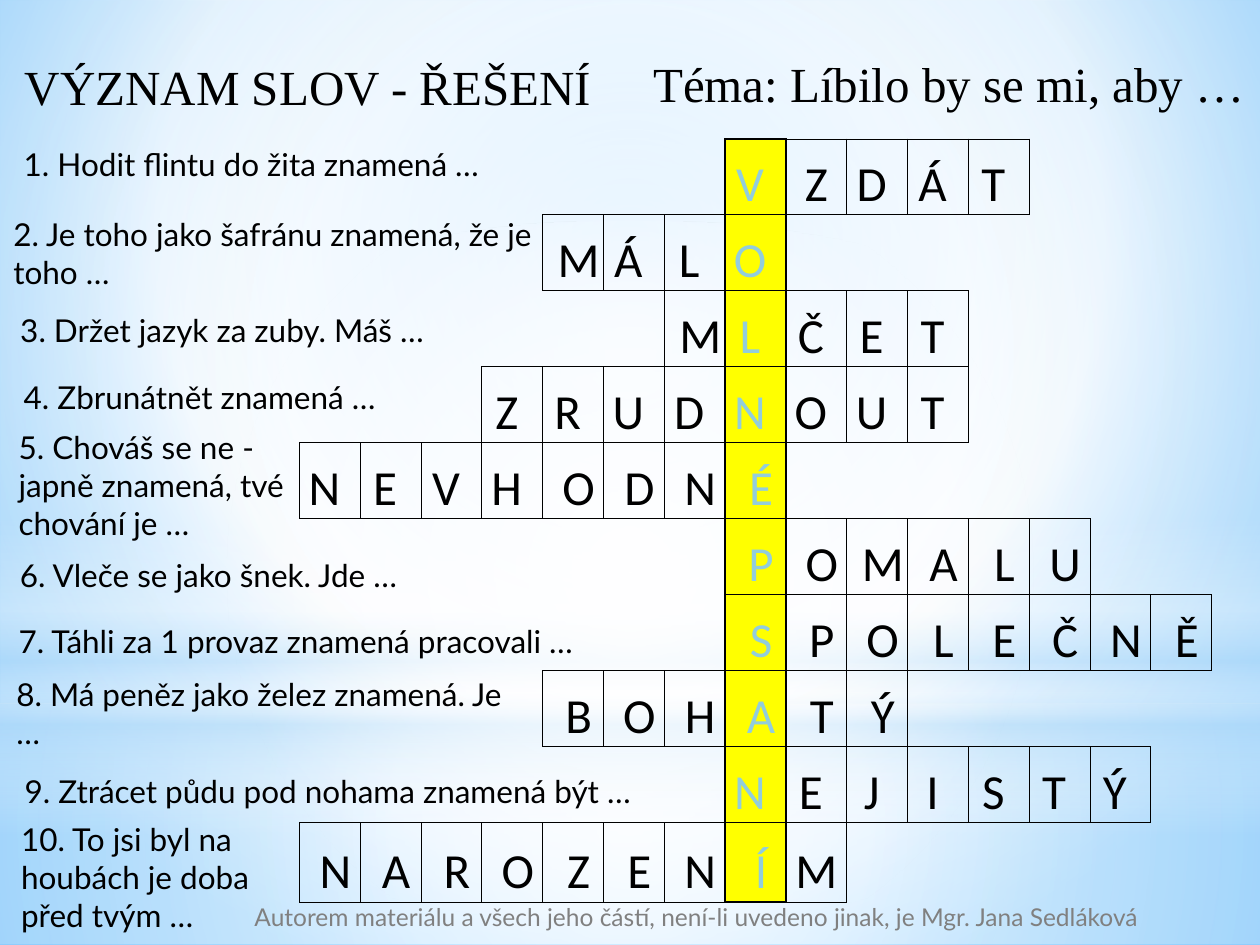
from lxml import etree
from pptx import Presentation
from pptx.dml.color import RGBColor
from pptx.enum.shapes import MSO_SHAPE as SHAPE
from pptx.enum.text import MSO_ANCHOR as ANCHOR, MSO_AUTO_SIZE as AUTO, PP_ALIGN as ALIGN
from pptx.oxml.ns import qn
from pptx.util import Pt

NBSP = chr(160)
BLACK, KEY_TEXT, KEY_FILL, GREY = "000000", "92CDDC", "FFFF00", "808080"
PLAIN_STYLE = "{2D5ABB26-0587-4C30-8999-92F81FD0307C}"
KEY_COL, COLS = 7, 15

# First column and letters of each answer; "_" is a no-break space
ANSWERS = [
    (7, "V_ Z D_ Á_ T_"),
    (4, "_M Á_ L_ O_"),
    (6, "_M L_ Č_ E_ T_"),
    (3, "Z_ R_ U_ D_ N_ O_ U_ T_"),
    (0, "N_ E_ V_ H_ _O _D _N _É"),
    (7, "_P _O _M _A _L _U"),
    (7, "_S _P _O _L _E _Č _N _Ě"),
    (4, "_B _O _H _A _T _Ý"),
    (7, "N_ E_ J_ I_ S_ T_ Ý_"),
    (0, "_N _A _R _O _Z _E _N _Í M"),
]

# Clue text and box: left, top, width, height
CLUES = [
    ("1. Hodit flintu do žita znamená …", (6.5, 79.2, 391, 29)),
    ("2. Je toho jako šafránu znamená, že je toho …", (0.5, 119.5, 312, 51)),
    ("3. Držet jazyk za zuby. Máš …", (4.5, 174.2, 369, 29)),
    ("4. Zbrunátnět znamená …", (6.5, 212.2, 266, 29)),
    ("5. Chováš se ne - japně znamená, tvé chování je …", (3.6, 241.2, 170.6, 72)),
    ("6. Vleče se jako šnek. Jde …", (4.3, 314, 278, 29)),
    ("7. Táhli za 1 provaz znamená pracovali …", (3.6, 352, 408, 29)),
    ("8. Má peněz jako želez znamená. Je …", (2.2, 382.3, 294.5, 51)),
    ("9. Ztrácet půdu pod nohama znamená být …", (7, 437.8, 397, 29)),
    ("10. To jsi byl na houbách je doba před tvým …", (5, 465.1, 158.4, 72.7)),
]


def rgb(value):
    return RGBColor.from_string(value)


def add_run(p, text, size, font, color):
    r = p.add_run()
    r.text = text
    r.font.size = Pt(size)
    r.font.name = font
    r.font.color.rgb = rgb(color)


def set_gradient(parent, stops, focus=None, angle=0):
    """Swap the empty fill of parent for (position, colour, opacity) stops."""
    grad = etree.Element(qn("a:gradFill"), rotWithShape="1")
    stop_list = etree.SubElement(grad, qn("a:gsLst"))
    for pos, color, opacity in stops:
        gs = etree.SubElement(stop_list, qn("a:gs"), pos=str(pos * 1000))
        clr = etree.SubElement(gs, qn("a:srgbClr"), val=color)
        if opacity < 100:
            etree.SubElement(clr, qn("a:alpha"), val=str(opacity * 1000))
    if focus:
        path = etree.SubElement(grad, qn("a:path"), path="circle")
        sides = {side: str(v * 1000) for side, v in zip("ltrb", focus)}
        etree.SubElement(path, qn("a:fillToRect"), **sides)
    else:
        etree.SubElement(grad, qn("a:lin"), ang=str(angle * 60000), scaled="0")
    parent.replace(parent.find(qn("a:noFill")), grad)


def add_glow(slide, kind, box, stops, **direction):
    sp = slide.shapes.add_shape(kind, *map(Pt, box))
    sp.shadow.inherit = False
    sp.line.fill.background()
    sp.fill.background()
    set_gradient(sp.element.spPr, stops, **direction)


def add_backdrop(slide, width, height):
    slide.background.fill.background()
    set_gradient(slide.element.find(".//" + qn("p:bgPr")),
                 [(0, "9ED5FF", 100), (60, "FFFFFF", 100), (100, "5BB9FF", 100)],
                 focus=(20, 10, 20, 60))
    center = (50, 50, 50, 50)
    split = 402
    add_glow(slide, SHAPE.RECTANGLE, (0, split, width, height - split),
             [(0, "FFFFFF", 91), (37, "FFFFFF", 76), (100, "B4DCFA", 79)], focus=center)
    add_glow(slide, SHAPE.RECTANGLE, (0, 0, width, split),
             [(0, "FFFFFF", 89), (48, "FFFFFF", 62), (100, "B4DCFA", 79)], focus=center)
    add_glow(slide, SHAPE.RECTANGLE, (0, 296.6, width, 180),
             [(0, "FFFFFF", 0), (29, "FFFFFF", 30), (45, "B4DCFA", 40),
              (55, "FFFFFF", 26), (65, "B4DCFA", 60), (100, "FFFFFF", 0)], angle=90)
    add_glow(slide, SHAPE.OVAL, (0, 126, width, split),
             [(0, "FFFFFF", 100), (56, "FFFFFF", 0)], focus=center)


def add_border(tc_pr, side, width):
    ln = etree.SubElement(tc_pr, qn("a:ln" + side), w=str(Pt(width)))
    if width:
        fill = etree.SubElement(ln, qn("a:solidFill"))
        etree.SubElement(fill, qn("a:srgbClr"), val=BLACK)
    else:
        etree.SubElement(ln, qn("a:noFill"))


def add_crossword(slide, box):
    left, top, width, height = box
    letters = {(row, start + i): letter.replace("_", NBSP)
               for row, (start, word) in enumerate(ANSWERS, 1)
               for i, letter in enumerate(word.split())}
    key = {pos for pos in letters if pos[1] == KEY_COL}

    def edge(a, b):
        if (a in key) != (b in key):
            return 1
        return 0.5 if a in letters or b in letters else 0

    rows = len(ANSWERS) + 1
    frame = slide.shapes.add_table(rows, COLS, *map(Pt, box))
    table = frame.table
    table.first_row = table.horz_banding = False
    frame.element.find(".//" + qn("a:tableStyleId")).text = PLAIN_STYLE
    for col in table.columns:
        col.width = Pt(width / COLS)
    end_height = 45.6
    for i, row in enumerate(table.rows):
        inner = (height - 2 * end_height) / (rows - 2)
        row.height = Pt(end_height if i in (0, rows - 1) else inner)

    for r in range(rows):
        for c in range(COLS):
            pos, cell = (r, c), table.cell(r, c)
            tc_pr = cell._tc.get_or_add_tcPr()
            around = {"L": (r, c - 1), "R": (r, c + 1), "T": (r - 1, c), "B": (r + 1, c)}
            for side, other in around.items():
                add_border(tc_pr, side, edge(pos, other))
            if pos in key:
                cell.fill.solid()
                cell.fill.fore_color.rgb = rgb(KEY_FILL)
            else:
                cell.fill.background()
            if pos in letters:
                cell.margin_left = cell.margin_right = cell.margin_top = Pt(0.7)
                cell.margin_bottom = Pt(0)
                cell.vertical_anchor = ANCHOR.BOTTOM
                p = cell.text_frame.paragraphs[0]
                p.alignment = ALIGN.CENTER
                add_run(p, letters[pos], 28, "Calibri", KEY_TEXT if pos in key else BLACK)


def add_text(slide, box, text, size, font, color=BLACK):
    tf = slide.shapes.add_textbox(*map(Pt, box)).text_frame
    tf.word_wrap = True
    tf.auto_size = AUTO.SHAPE_TO_FIT_TEXT
    add_run(tf.paragraphs[0], text, size, font, color)
    return tf


def add_footer(slide, box):
    tf = add_text(slide, box, "Autorem materiálu a všech jeho částí, není-li uvedeno jinak, "
                  "je Mgr. Jana Sedláková", 14, "Lato", GREY)
    tf.auto_size = AUTO.NONE
    tf.margin_left = Pt(0)
    tf.vertical_anchor = ANCHOR.MIDDLE


def main():
    prs = Presentation()
    prs.slide_width, prs.slide_height = Pt(720), Pt(540)
    slide = prs.slides.add_slide(prs.slide_layouts[6])
    add_backdrop(slide, 720, 540)
    add_crossword(slide, (171.1, 33.8, 521.3, 481.8))
    # Clues
    for text, box in CLUES:
        add_text(slide, box, text, 18, "Lato")
    # Headings
    add_text(slide, (7.2, 28.6, 366, 41), "VÝZNAM SLOV - ŘEŠENÍ", 28, "Times New Roman")
    add_text(slide, (366.3, 26.8, 353.7, 41), "Téma: Líbilo by se mi, aby …", 28,
             "Times New Roman")
    add_footer(slide, (145.4, 504.7, 605.5, 38.2))
    prs.save("out.pptx")


if __name__ == "__main__":
    main()
